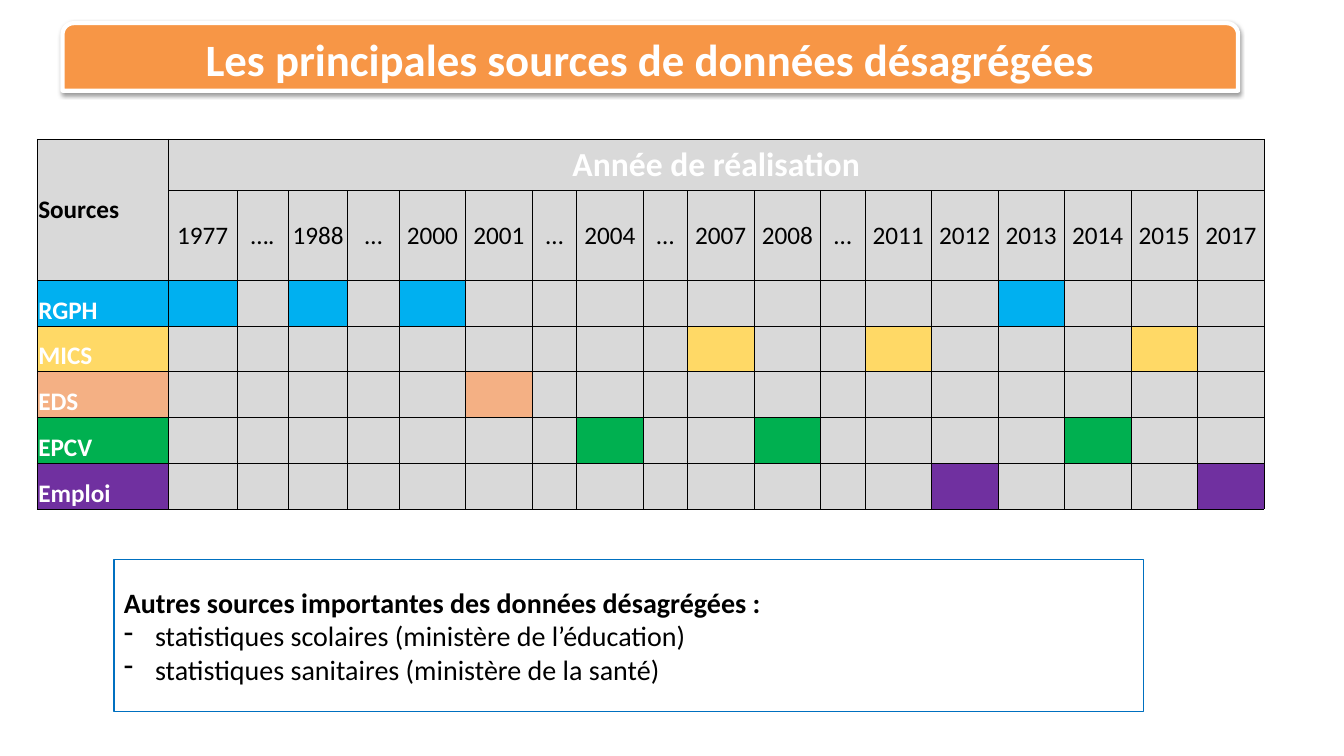
from lxml import etree
from pptx import Presentation
from pptx.dml.color import RGBColor
from pptx.enum import shapes, text
from pptx.oxml import parse_xml
from pptx.oxml.ns import nsdecls
from pptx.util import Inches, Pt

COLORS = {
    "white": "FFFFFF", "black": "000000", "orange": "F79646", "grey": "D9D9D9",
    "border": "0070C0", "RGPH": "00B0F0", "MICS": "FFD966", "EDS": "F4B084",
    "EPCV": "00B050", "Emploi": "7030A0",
}
NS = nsdecls("a")


def add_run(p, words, size, color, bold=False):
    r = p.add_run()
    r.text = words
    r.font.name = "Calibri"
    r.font.size = Pt(size)
    r.font.bold = bold
    r.font.color.rgb = RGBColor.from_string(COLORS[color])


def add_box(kind, left, top, width, height, fill, line, weight):
    sp = s.shapes.add_shape(kind, Inches(left), Inches(top), Inches(width), Inches(height))
    sp.shadow.inherit = False
    sp.fill.solid()
    sp.fill.fore_color.rgb = RGBColor.from_string(COLORS[fill])
    sp.line.color.rgb = RGBColor.from_string(COLORS[line])
    sp.line.width = Pt(weight)
    sp.text_frame.word_wrap = True
    return sp


prs = Presentation()
prs.slide_width, prs.slide_height = Inches(13.33), Inches(7.5)
s = prs.slides.add_slide(prs.slide_layouts[6])

# Title banner with a soft shadow below
banner = add_box(shapes.MSO_SHAPE.ROUND_2_SAME_RECTANGLE, 0.62, 0.23, 11.66, 0.67,
                 "orange", "white", 3)
effects = banner._element.spPr.find("{*}effectLst")
effects.append(parse_xml(
    f'<a:outerShdw {NS} blurRad="{Pt(3.1)}" dist="{Pt(1.6)}" dir="5400000" rotWithShape="0">'
    f'<a:srgbClr val="{COLORS["black"]}"><a:alpha val="38000"/></a:srgbClr></a:outerShdw>'))
tf = banner.text_frame
tf.vertical_anchor = text.MSO_ANCHOR.TOP
tf.auto_size = text.MSO_AUTO_SIZE.SHAPE_TO_FIT_TEXT
p = tf.paragraphs[0]
p.alignment = text.PP_ALIGN.CENTER
add_run(p, "Les principales sources de données désagrégées", 32, "white", True)

# Survey calendar: years across, sources down
years = ["1977", "….", "1988", "…", "2000", "2001", "…", "2004", "…", "2007", "2008",
         "…", "2011", "2012", "2013", "2014", "2015", "2017"]
surveys = {
    "RGPH": ["1977", "1988", "2000", "2013"],
    "MICS": ["2007", "2011", "2015"],
    "EDS": ["2001"],
    "EPCV": ["2004", "2008", "2014"],
    "Emploi": ["2012", "2017"],
}
widths = [1.3, 0.68, 0.51, 0.59, 0.51] + [0.44 if y == "…" else 0.66 for y in years[4:]]
heights = [0.51, 0.89] + [2.27 / len(surveys)] * len(surveys)
frame = s.shapes.add_table(len(heights), len(widths), Inches(0.37), Inches(1.38),
                           Inches(12.17), Inches(3.67))
table = frame.table
table.first_row = table.horz_banding = False
for column, width in zip(table.columns, widths):
    column.width = Inches(width)
for row, height in zip(table.rows, heights):
    row.height = Inches(height)

# Grey cells with thin black borders
for cell in table.iter_cells():
    cell.margin_left = cell.margin_right = cell.margin_top = Inches(0.01)
    cell.margin_bottom = 0
    cell.vertical_anchor = text.MSO_ANCHOR.MIDDLE
    cell.fill.solid()
    cell.fill.fore_color.rgb = RGBColor.from_string(COLORS["grey"])
    for i, side in enumerate("LRTB"):
        cell._tc.tcPr.insert(i, parse_xml(
            f'<a:ln{side} {NS} w="{Pt(0.5)}"><a:solidFill>'
            f'<a:srgbClr val="{COLORS["black"]}"/></a:solidFill></a:ln{side}>'))

# Headings
table.cell(0, 0).merge(table.cell(1, 0))
table.cell(0, 1).merge(table.cell(0, len(years)))
add_run(table.cell(0, 0).text_frame.paragraphs[0], "Sources", 18, "black", True)
p = table.cell(0, 1).text_frame.paragraphs[0]
p.alignment = text.PP_ALIGN.CENTER
add_run(p, "Année de réalisation", 24, "white", True)
for col, year in enumerate(years, 1):
    p = table.cell(1, col).text_frame.paragraphs[0]
    p.alignment = text.PP_ALIGN.CENTER
    add_run(p, year, 18, "black")

# Source names and the years each one was carried out
for row, (source, done) in enumerate(surveys.items(), 2):
    name = table.cell(row, 0)
    name.vertical_anchor = text.MSO_ANCHOR.BOTTOM
    add_run(name.text_frame.paragraphs[0], source, 18, "white", True)
    for col in [0] + [years.index(year) + 1 for year in done]:
        table.cell(row, col).fill.fore_color.rgb = RGBColor.from_string(COLORS[source])

# Other sources
others = add_box(shapes.MSO_SHAPE.RECTANGLE, 1.13, 5.55, 10.21, 1.51, "white", "border", 1)
tf = others.text_frame
tf.vertical_anchor = text.MSO_ANCHOR.MIDDLE
p = tf.paragraphs[0]
p.alignment = text.PP_ALIGN.LEFT
add_run(p, "Autres sources importantes des données désagrégées :", 20, "black", True)
for item in ["statistiques scolaires (ministère de l’éducation)",
             "statistiques sanitaires (ministère de la santé)"]:
    p = tf.add_paragraph()
    p.alignment = text.PP_ALIGN.LEFT
    pPr = p._p.get_or_add_pPr()
    pPr.set("marL", str(Inches(0.31)))
    pPr.set("indent", str(-Inches(0.31)))
    etree.SubElement(pPr, pPr.tag.replace("pPr", "buChar"), char="-")
    add_run(p, item, 20, "black")

prs.save("out.pptx")
